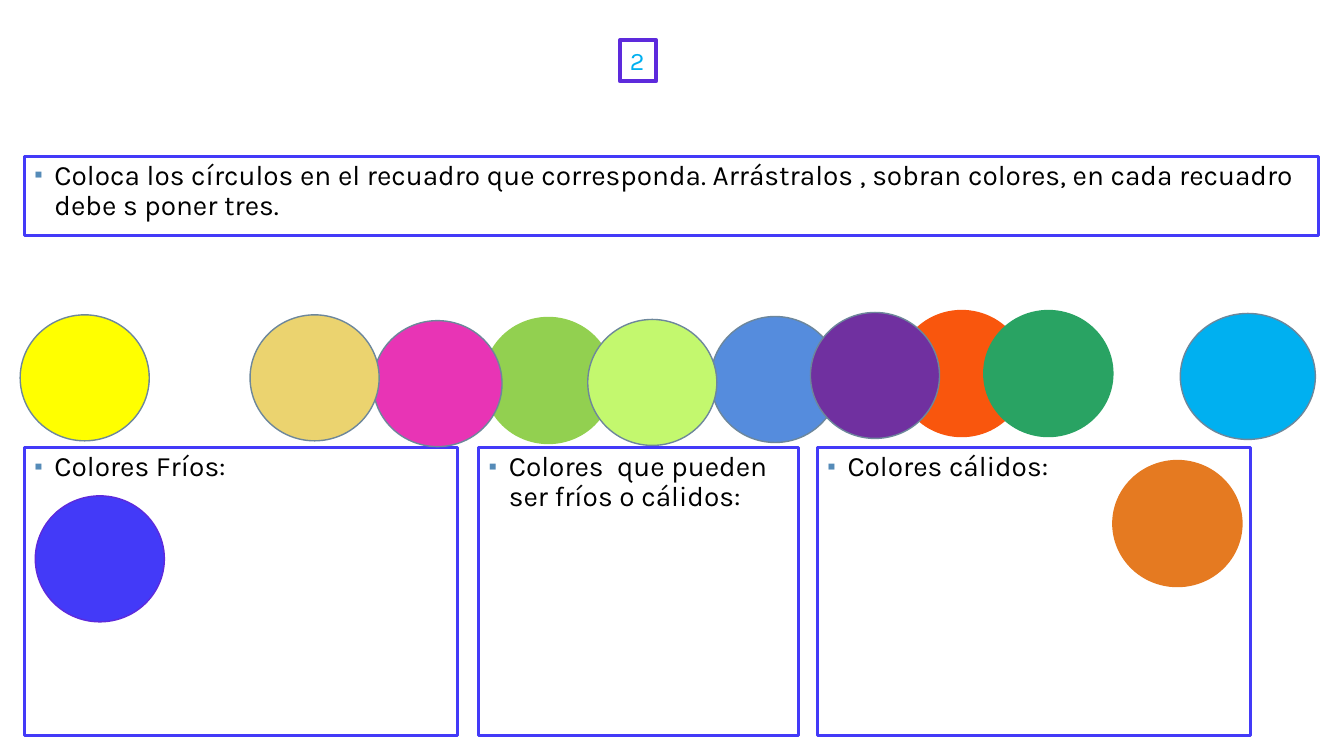
from lxml.etree import SubElement
from pptx import Presentation
from pptx.dml.color import RGBColor
from pptx.enum.shapes import MSO_SHAPE
from pptx.enum.text import MSO_ANCHOR, MSO_AUTO_SIZE, PP_ALIGN
from pptx.oxml.ns import qn
from pptx.util import Pt

FONT = "Karla"
COLORS = {
    "text": "000000", "bullet": "558BB8", "frame": "433AF8", "outline": "6D879B",
    "number": "00B0F0", "violet": "5D2ADC", "blue": "558CDD", "red": "F9560D",
    "orange": "E57A21", "purple": "7030A0", "green": "92D050", "sky": "00B0F0",
    "pink": "E834B5", "yellow": "FFFF00", "indigo": "433AF8", "emerald": "29A363",
    "lime": "C3F86E", "sand": "EBD36F",
}
NUMBER = "2"
INSTRUCTION = ("Coloca los círculos en el recuadro que corresponda. Arrástralos , "
               "sobran colores, en cada recuadro debe s poner tres.")
COLD = "Colores Fríos:"
EITHER = "Colores  que pueden ser fríos o cálidos:"
WARM = "Colores cálidos:"

LEFT, BOX_TOP, BOX_H = 17.3, 319.7, 205.9
WIDE, NARROW = 309.6, 228.2
DISC_W, DISC_H = 92.2, 90
DISCS = [
    ("blue", "outline", 507.6, 226.1, DISC_W),
    ("red", "red", 640.8, 221.8, DISC_W),
    ("orange", "orange", 794.9, 329, DISC_W),
    ("purple", "outline", 578.9, 223.2, DISC_W),
    ("green", "green", 345.6, 226.8, DISC_W),
    ("sky", "outline", 843.1, 223.9, 96.5),
    ("pink", "outline", 266.4, 229, DISC_W),
    ("yellow", "outline", 14.4, 224.9, DISC_W),
    ("indigo", "violet", 25.2, 354.2, DISC_W),
    ("emerald", "emerald", 702.7, 221.8, DISC_W),
    ("lime", "outline", 419.8, 228.2, DISC_W),
    ("sand", "outline", 178.6, 224.9, DISC_W),
]


def rgb(name):
    return RGBColor.from_string(COLORS[name])


def place(sp, x, y, w, h):
    sp.left, sp.top, sp.width, sp.height = Pt(x), Pt(y), Pt(w), Pt(h)


def write(sp, text, size, color, line, line_width):
    sp.line.color.rgb = rgb(line)
    sp.line.width = Pt(line_width)
    tf = sp.text_frame
    tf.text = text
    tf.word_wrap = True
    tf.auto_size = MSO_AUTO_SIZE.NONE
    tf.vertical_anchor = MSO_ANCHOR.TOP
    p = tf.paragraphs[0]
    p.alignment = PP_ALIGN.LEFT
    p.space_before = Pt(0)
    r = p.runs[0]
    r.font.name = FONT
    r.font.size = Pt(size)
    r.font.color.rgb = rgb(color)
    return p


def add_bullet(p):
    pPr = p._p.get_or_add_pPr()
    pPr.set("marL", str(Pt(14.4)))
    pPr.set("indent", str(-Pt(14.4)))
    clr = SubElement(pPr, qn("a:buClr"))
    SubElement(clr, qn("a:srgbClr"), val=COLORS["bullet"])
    SubElement(pPr, qn("a:buSzPct"), val="85000")
    SubElement(pPr, qn("a:buFont"), typeface="Arial")
    SubElement(pPr, qn("a:buChar"), char="▪")


def fill_frame(sp, text, x, y, w, h):
    place(sp, x, y, w, h)
    p = write(sp, text, 20, "text", "frame", 2.25)
    p.line_spacing = 0.9
    add_bullet(p)


def add_disc(slide, fill, line, x, y, w):
    sp = slide.shapes.add_shape(MSO_SHAPE.FLOWCHART_CONNECTOR, Pt(x), Pt(y), Pt(w), Pt(DISC_H))
    sp.shadow.inherit = False
    sp.fill.solid()
    sp.fill.fore_color.rgb = rgb(fill)
    sp.line.color.rgb = rgb(line)
    sp.line.width = Pt(1)


def main():
    prs = Presentation()
    prs.slide_width, prs.slide_height = Pt(960), Pt(540)
    slide = prs.slides.add_slide(prs.slide_layouts[3])
    title, cold, instruction = slide.placeholders

    place(title, 442.8, 28.8, 25.9, 29.1)
    write(title, NUMBER, 18, "number", "violet", 3)
    title.text_frame.word_wrap = False

    fill_frame(cold, COLD, LEFT, BOX_TOP, WIDE, BOX_H)
    fill_frame(instruction, INSTRUCTION, LEFT, 111.6, 924.5, 56.9)
    for disc in DISCS:
        add_disc(slide, *disc)
    for text, x, w in [(WARM, 583.9, WIDE), (EITHER, 342, NARROW)]:
        box = slide.shapes.add_textbox(0, 0, 0, 0)
        fill_frame(box, text, x, BOX_TOP, w, BOX_H)

    prs.save("out.pptx")


if __name__ == "__main__":
    main()
